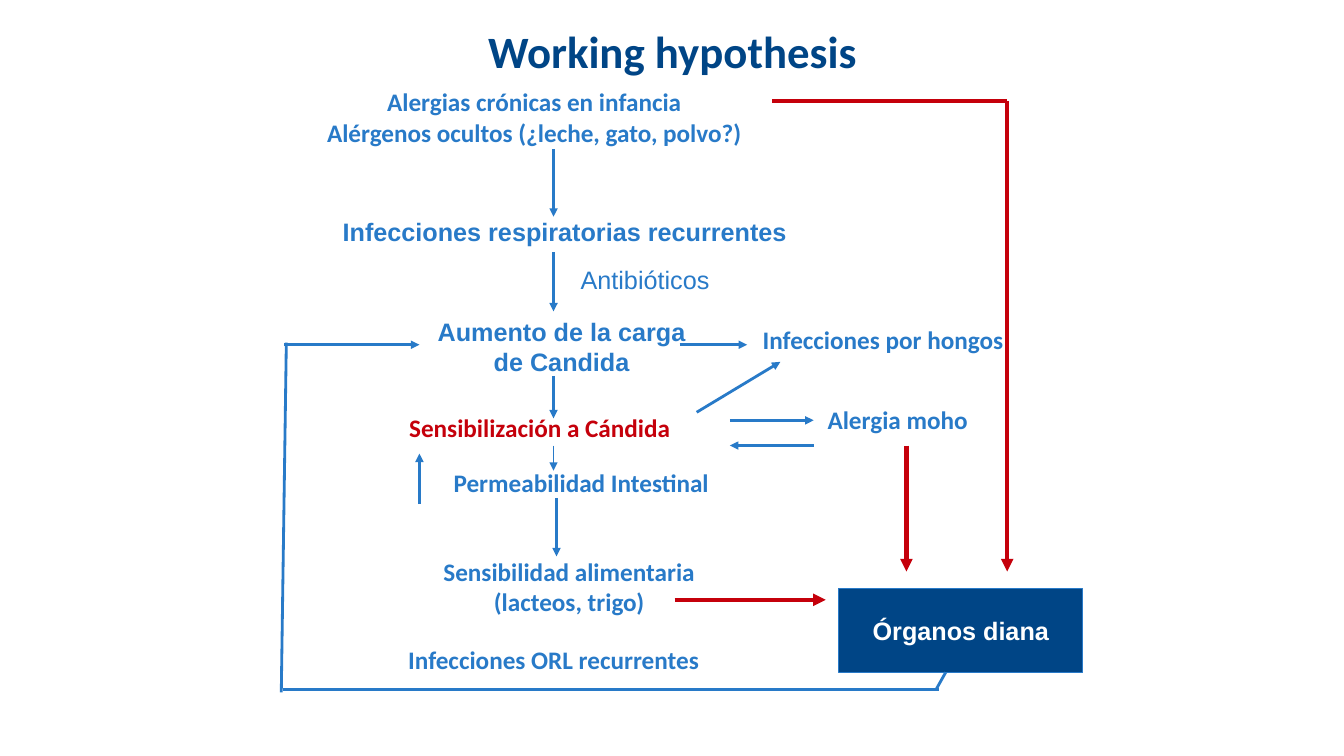
from dataclasses import dataclass

from lxml import etree
from pptx import Presentation
from pptx import util as u
from pptx.dml.color import RGBColor
from pptx.enum import shapes, text
from pptx.oxml.ns import qn

PX = 9144  # 100 px to the inch
COLOURS = {"blue": "287AC8", "red": "C5000B", "navy": "004586", "white": "FFFFFF"}
LEFT, CENTER, RIGHT = text.PP_ALIGN.LEFT, text.PP_ALIGN.CENTER, text.PP_ALIGN.RIGHT


@dataclass
class Label:
    lines: tuple[str, ...]
    box: tuple[int, int, int, int]
    font: str = "Calibri"
    colour: str = "blue"
    bold: bool = True
    align: text.PP_ALIGN = LEFT
    wrap: bool = False


@dataclass
class Line:
    start: tuple[int, int]
    end: tuple[int, int]
    colour: str = "blue"
    width: float = 2
    arrow: bool = True


LABELS = [
    Label(("Alergias crónicas en infancia", "Alérgenos ocultos (¿leche, gato, polvo?)"),
          (313, 81, 434, 71), align=CENTER),
    Label(("Infecciones respiratorias recurrentes",), (330, 210, 465, 40), "Arial"),
    Label(("Antibióticos",), (566, 257, 149, 40), "Arial", bold=False),
    Label(("Aumento de la carga", "de Candida"), (423, 309, 268, 71), "Arial", align=CENTER),
    Label(("Infecciones por hongos",), (700, 317, 305, 40), align=RIGHT, wrap=True),
    Label(("Sensibilización a Cándida",), (396, 404, 281, 40), colour="red"),
    Label(("Alergia moho",), (811, 396, 160, 40)),
    Label(("Permeabilidad Intestinal",), (440, 459, 275, 40)),
    Label(("Sensibilidad alimentaria", "(lacteos, trigo)"), (429, 547, 271, 71), align=CENTER),
    Label(("Infecciones ORL recurrentes",), (395, 634, 311, 40)),
]
TARGET_ORGANS = Label(("Órganos diana",), (832, 584, 242, 83), "Arial", "white", align=CENTER)

LINES = [
    # main chain, top to bottom
    Line((549, 148), (549, 215)),
    Line((549, 250), (549, 309)),
    Line((549, 373), (549, 415)),
    Line((549, 442), (549, 467), width=0.75),
    Line((552, 494), (552, 552)),
    Line((416, 500), (416, 450)),
    # fungal infections and mould allergy
    Line((674, 342), (741, 342)),
    Line((691, 409), (774, 359)),
    Line((724, 417), (807, 417)),
    Line((807, 442), (724, 442)),
    # paths to the target organs
    Line((899, 442), (899, 567), "red", 3),
    Line((669, 595), (819, 595), "red", 3),
    Line((766, 100), (999, 100), "red", 3, arrow=False),
    Line((999, 100), (999, 567), "red", 3),
    # feedback loop
    Line((938, 667), (929, 683), arrow=False),
    Line((281, 684), (931, 684), arrow=False),
    Line((284, 340), (279, 687), arrow=False),
    Line((282, 342), (416, 342)),
]


def rgb(name: str) -> RGBColor:
    return RGBColor.from_string(COLOURS[name])


def emu(*lengths: int) -> list[int]:
    return [length * PX for length in lengths]


def write_text(tf, label: Label, size: int = 18) -> None:
    tf.word_wrap = label.wrap
    for i, line in enumerate(label.lines):
        p = tf.add_paragraph() if i else tf.paragraphs[0]
        p.alignment = label.align
        r = p.add_run()
        r.text = line
        r.font.name = label.font
        r.font.size = u.Pt(size)
        r.font.bold = label.bold
        r.font.color.rgb = rgb(label.colour)


def add_label(s, label: Label) -> None:
    tf = s.shapes.add_textbox(*emu(*label.box)).text_frame
    write_text(tf, label)
    tf.auto_size = text.MSO_AUTO_SIZE.SHAPE_TO_FIT_TEXT


def add_line(s, line: Line) -> None:
    sp = s.shapes.add_connector(shapes.MSO_CONNECTOR.STRAIGHT, *emu(*line.start, *line.end))
    sp.line.color.rgb = rgb(line.colour)
    sp.line.width = u.Pt(line.width)
    if line.arrow:
        etree.SubElement(sp.line._get_or_add_ln(), qn("a:tailEnd"), type="triangle")
    etree.SubElement(sp._element.spPr, qn("a:effectLst"))


def add_target_box(s, label: Label) -> None:
    sp = s.shapes.add_shape(shapes.MSO_SHAPE.RECTANGLE, *emu(*label.box))
    sp.shadow.inherit = False
    sp.fill.solid()
    sp.fill.fore_color.rgb = rgb("navy")
    sp.line.color.rgb = rgb("blue")
    sp.line.width = u.Pt(0.75)
    sp.text_frame.vertical_anchor = text.MSO_ANCHOR.MIDDLE
    write_text(sp.text_frame, label)


def set_title(s, label: Label) -> None:
    sp = s.shapes.title
    sp.left, sp.top, sp.width, sp.height = emu(*label.box)
    tf = sp.text_frame
    tf.auto_size = text.MSO_AUTO_SIZE.NONE
    tf.vertical_anchor = text.MSO_ANCHOR.MIDDLE
    write_text(tf, label, size=32)


def main() -> None:
    prs = Presentation()
    prs.slide_width, prs.slide_height = emu(1333, 750)
    s = prs.slides.add_slide(prs.slide_layouts[5])
    set_title(s, Label(("Working hypothesis",), (67, 17, 1200, 66),
                       colour="navy", align=CENTER, wrap=True))
    for label in LABELS:
        add_label(s, label)
    add_target_box(s, TARGET_ORGANS)
    for line in LINES:
        add_line(s, line)
    prs.save("out.pptx")


if __name__ == "__main__":
    main()
